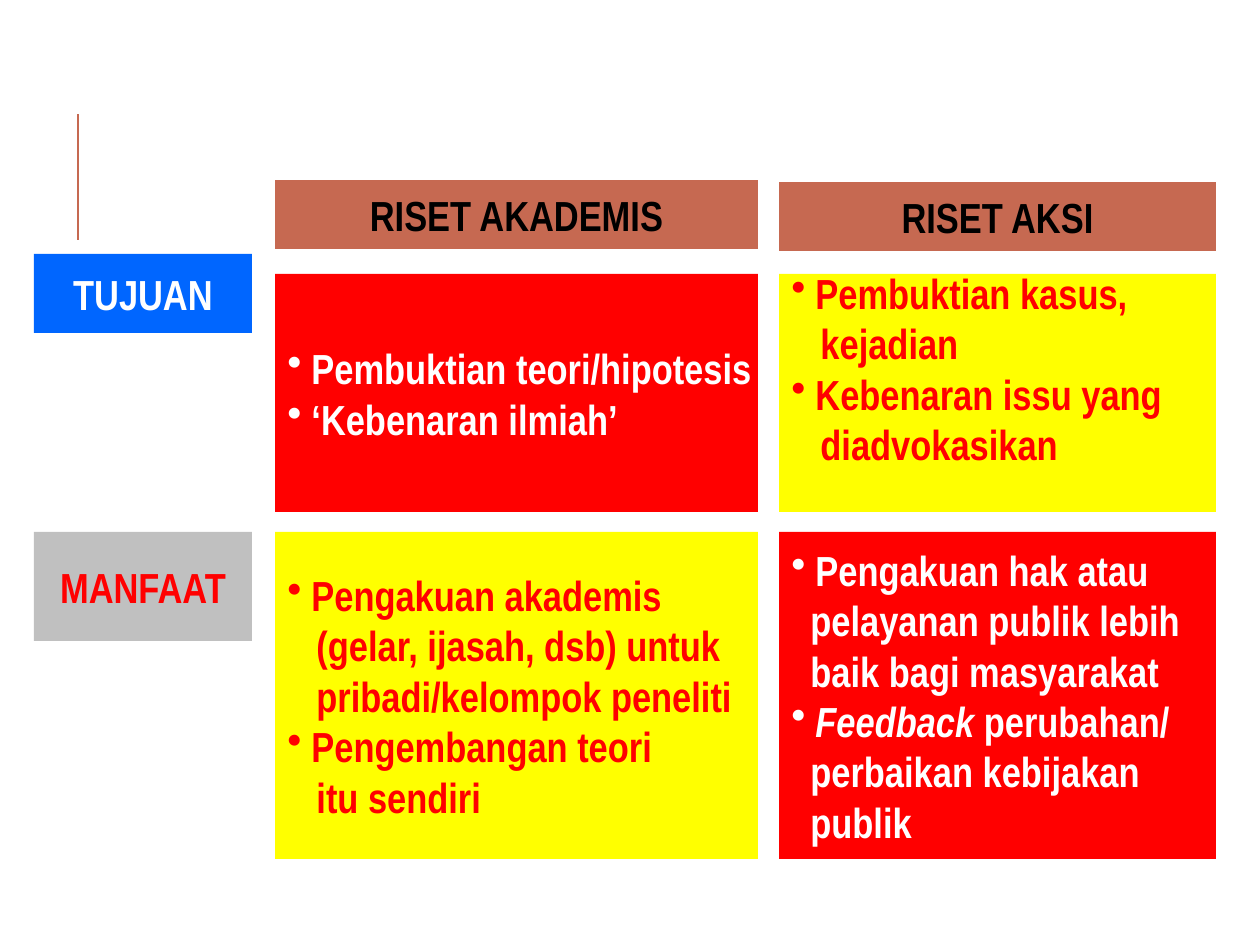
from lxml import etree
from pptx import Presentation
from pptx import util as u
from pptx.dml import color
from pptx.enum import shapes, text
from pptx.oxml import ns

FONT = "Arial Narrow"
RUST, RED, YELLOW = "C66951", "FF0000", "FFFF00"
WHITE, BLACK, BLUE, GREY = "FFFFFF", "000000", "0066FF", "C0C0C0"
LABELS, ACADEMIC, ACTION = (34, 218), (275, 483), (779, 437)
PURPOSE, BENEFIT = (274, 238), (532, 327)
INSET, LINE_HEIGHT, BULLET_INDENT = 6, 50, 24


def px(value):
    return u.Emu(round(value * 914400 / 126))


def rgb(value):
    return color.RGBColor.from_string(value)


def add_box(slide, column, row, fill):
    (left, width), (top, height) = column, row
    shape = slide.shapes.add_shape(
        shapes.MSO_SHAPE.RECTANGLE, px(left), px(top), px(width), px(height))
    shape.shadow.inherit = False
    shape.fill.solid()
    shape.fill.fore_color.rgb = rgb(fill)
    shape.line.fill.background()
    frame = shape.text_frame
    frame.word_wrap = False
    frame.vertical_anchor = text.MSO_ANCHOR.MIDDLE
    return frame


def style(paragraph, ink, alignment):
    paragraph.alignment = alignment
    font = paragraph.font
    font.name, font.size, font.bold = FONT, u.Pt(24), True
    font.color.rgb = rgb(ink)


def add_heading(slide, column, row, fill, ink, title):
    paragraph = add_box(slide, column, row, fill).paragraphs[0]
    paragraph.text = title
    style(paragraph, ink, text.PP_ALIGN.CENTER)


def set_indent(paragraph, margin, bulleted):
    properties = paragraph._p.get_or_add_pPr()
    properties.set("marL", str(px(margin)))
    properties.set("indent", str(px(-margin if bulleted else 0)))
    if bulleted:
        bullet = etree.Element(ns.qn("a:buChar"), char="•")
        properties.insert_element_before(bullet, "a:tabLst", "a:defRPr", "a:extLst")


def add_panel(slide, column, row, fill, ink, items, hanging=29, spare_lines=0):
    frame = add_box(slide, column, row, fill)
    frame.margin_bottom = px(INSET + spare_lines * LINE_HEIGHT)
    lines = [(line, number == 0) for item in items for number, line in enumerate(item)]
    for number, (line, bulleted) in enumerate(lines):
        paragraph = frame.add_paragraph() if number else frame.paragraphs[0]
        style(paragraph, ink, text.PP_ALIGN.LEFT)
        set_indent(paragraph, BULLET_INDENT if bulleted else hanging, bulleted)
        for part_number, part in enumerate(line.split("*")):
            if part:
                run = paragraph.add_run()
                run.text = part
                if part_number % 2:
                    run.font.italic = True


def add_accent(slide, x, top, bottom):
    line = slide.shapes.add_connector(
        shapes.MSO_CONNECTOR.STRAIGHT, px(x), px(bottom), px(x), px(top))
    line.line.color.rgb = rgb(RUST)
    line.line.width = u.Pt(1.5)
    etree.SubElement(line._element.spPr, ns.qn("a:effectLst"))


def main():
    presentation = Presentation()
    presentation.slide_width, presentation.slide_height = px(1260), px(945)
    slide = presentation.slides.add_slide(presentation.slide_layouts[6])

    add_accent(slide, 78, 114, 240)
    add_heading(slide, ACADEMIC, (180, 69), RUST, BLACK, "RISET AKADEMIS")
    add_heading(slide, ACTION, (182, 69), RUST, BLACK, "RISET AKSI")

    add_heading(slide, LABELS, (254, 79), BLUE, WHITE, "TUJUAN")
    add_panel(slide, ACADEMIC, PURPOSE, RED, WHITE, [
        ["Pembuktian teori/hipotesis"],
        ["‘Kebenaran ilmiah’"]])
    add_panel(slide, ACTION, PURPOSE, YELLOW, RED, [
        ["Pembuktian kasus,", "kejadian"],
        ["Kebenaran issu yang", "diadvokasikan"]], spare_lines=1)

    add_heading(slide, LABELS, (532, 109), GREY, RED, "MANFAAT")
    add_panel(slide, ACADEMIC, BENEFIT, YELLOW, RED, [
        ["Pengakuan akademis", "(gelar, ijasah, dsb) untuk", "pribadi/kelompok peneliti"],
        ["Pengembangan teori", "itu sendiri"]])
    add_panel(slide, ACTION, BENEFIT, RED, WHITE, [
        ["Pengakuan hak atau", "pelayanan publik lebih", "baik bagi masyarakat"],
        ["*Feedback *perubahan/", "perbaikan kebijakan", "publik"]], hanging=19)

    presentation.save("out.pptx")


if __name__ == "__main__":
    main()
